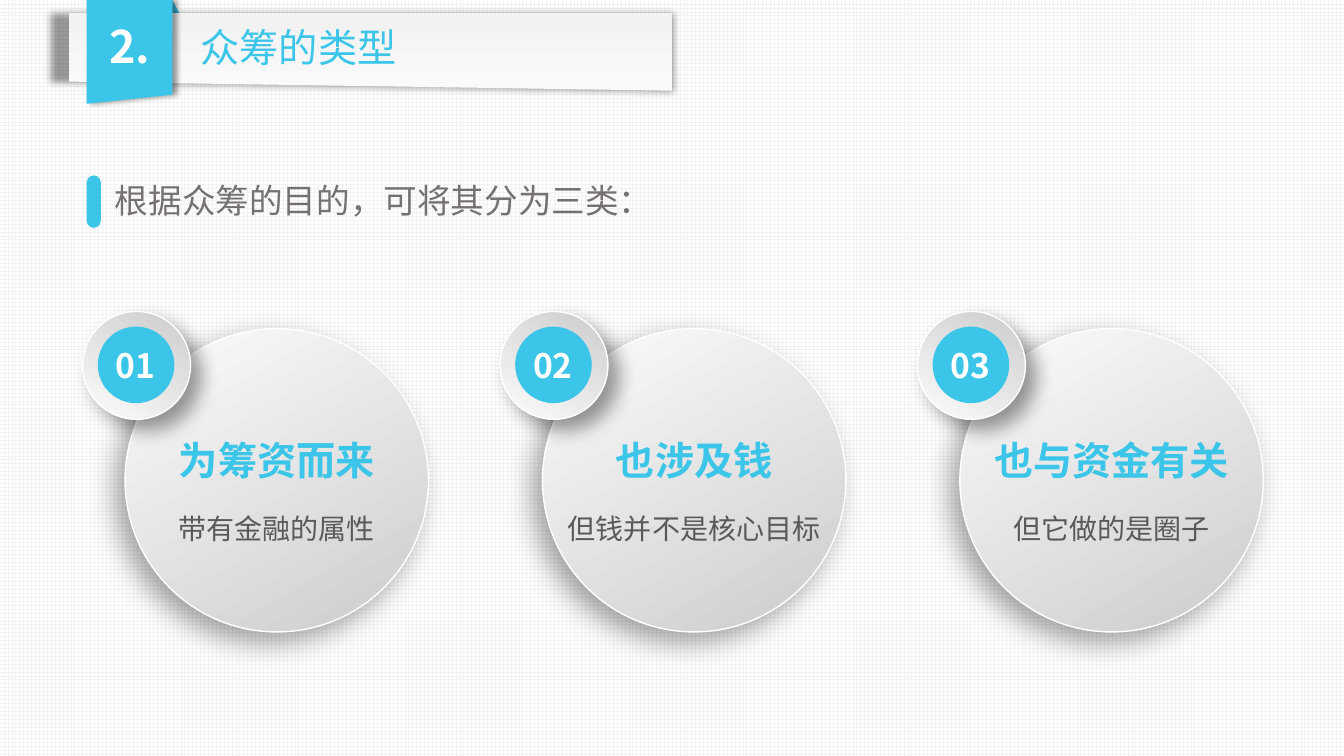
from lxml.etree import SubElement
from pptx import Presentation
from pptx.dml.color import RGBColor
from pptx.enum.dml import MSO_PATTERN
from pptx.enum.shapes import MSO_SHAPE
from pptx.enum.text import MSO_ANCHOR, PP_ALIGN
from pptx.oxml.ns import qn
from pptx.util import Inches, Pt

FONT = "Noto Sans CJK SC"
COLORS = {
    "blue": "3BC5E9", "white": "FFFFFF", "grid": "F2F2F2", "pale": "FAFAFA",
    "dark": "CCCCCC", "light": "FCFCFC", "text": "595959", "intro": "767171",
}
TYPES = [
    ("01", "为筹资而来", "带有金融的属性"),
    ("02", "也涉及钱", "但钱并不是核心目标"),
    ("03", "也与资金有关", "但它做的是圈子"),
]
FIRST_LEFT, PITCH = 0.82, 4.14


def rgb(name):
    return RGBColor.from_string(COLORS[name])


def paint(sp, fill, angle=None):
    """Fill with one colour, or with a (start, end) gradient at an angle."""
    sp.shadow.inherit = False
    sp.line.fill.background()
    if angle is None:
        sp.fill.solid()
        sp.fill.fore_color.rgb = rgb(fill)
        return
    sp.fill.gradient()
    sp.fill.gradient_angle = angle
    for stop, name in zip(sp.fill.gradient_stops, fill):
        stop.color.rgb = rgb(name)


def add_shadow(sp, alpha, blur, dist, direction, **scale):
    effects = sp.element.spPr.find(qn("a:effectLst"))
    shadow = SubElement(effects, qn("a:outerShdw"), blurRad=str(Pt(blur)),
                        dist=str(Pt(dist)), dir=str(direction * 60000),
                        rotWithShape="0", **scale)
    color = SubElement(shadow, qn("a:srgbClr"), val="000000")
    SubElement(color, qn("a:alpha"), val=str(alpha * 1000))


def add_preset(s, kind, left, top, width, height, fill, angle=None):
    sp = s.shapes.add_shape(kind, Inches(left), Inches(top),
                            Inches(width), Inches(height))
    paint(sp, fill, angle)
    return sp


def add_disc(s, left, top, size, angle):
    sp = add_preset(s, MSO_SHAPE.OVAL, left, top, size, size,
                    ("dark", "light"), angle)
    sp.line.color.rgb = rgb("white")
    sp.line.width = Pt(1)
    return sp


def add_outline(s, points, fill, angle=None):
    start, *rest = [(Inches(x), Inches(y)) for x, y in points]
    builder = s.shapes.build_freeform(*start)
    builder.add_line_segments(rest, close=True)
    sp = builder.convert_to_shape()
    paint(sp, fill, angle)
    return sp


def add_run(p, text, size, color, bold=False):
    r = p.add_run()
    r.text = text
    r.font.name = FONT
    r.font.size = Pt(size)
    r.font.bold = bold
    r.font.color.rgb = rgb(color)
    SubElement(r.font._element, qn("a:ea"), typeface=FONT)


def add_text(s, left, top, width, height, text, size, color,
             bold=False, align=PP_ALIGN.LEFT):
    box = s.shapes.add_textbox(Inches(left), Inches(top),
                               Inches(width), Inches(height))
    tf = box.text_frame
    tf.word_wrap = True
    p = tf.paragraphs[0]
    p.alignment = align
    add_run(p, text, size, color, bold)
    return tf


def add_header(s, number, heading):
    # Fold, bar and ribbon
    add_preset(s, MSO_SHAPE.RIGHT_TRIANGLE, 1.71, 0, 0.07, 0.13, "blue")
    bar = add_outline(s, [(6.67, 0.13), (0.68, 0.13), (0.68, 0.81), (6.67, 0.9)],
                      ("pale", "grid"), 90)
    add_shadow(bar, 40, 5, 0, 0, sx="103000", algn="r")
    ribbon = add_outline(s, [(1.71, 0), (1.71, 0.94), (0.86, 1.03), (0.86, 0)],
                         "blue")
    add_shadow(ribbon, 40, 4, 3, 0)
    add_text(s, 0.88, 0.14, 0.82, 0.64, number, 32, "white", True,
             PP_ALIGN.CENTER)

    # Title, brought in front of the bar
    title = s.shapes.title
    title.left, title.top = Inches(1.89), Inches(0.18)
    title.width, title.height = Inches(4.62), Inches(0.57)
    tf = title.text_frame
    tf.vertical_anchor = MSO_ANCHOR.TOP
    p = tf.paragraphs[0]
    p.alignment = PP_ALIGN.LEFT
    add_run(p, heading, 28, "blue")
    title.element.getparent().append(title.element)


def add_type(s, left, number, name, note):
    # Large disc with its name and note
    disc = add_disc(s, left + 0.42, 3.26, 3.01, 120)
    add_shadow(disc, 34, 20, 10, 136)
    tf = add_text(s, left + 0.42, 4.33, 3.01, 1.21, name, 28, "blue", True,
                  PP_ALIGN.CENTER)
    tf.margin_top = tf.margin_bottom = 0
    p = tf.add_paragraph()
    p.alignment = PP_ALIGN.CENTER
    p.space_before = Pt(20)
    add_run(p, note, 20, "text")

    # Number badge
    badge = add_disc(s, left, 3.09, 1.07, 240)
    add_shadow(badge, 40, 14, 10, 45)
    add_preset(s, MSO_SHAPE.OVAL, left + 0.15, 3.24, 0.76, 0.76, "blue")
    add_text(s, left + 0.2, 3.37, 0.65, 0.5, number, 24, "white", True,
             PP_ALIGN.CENTER)


def main():
    prs = Presentation()
    prs.slide_width, prs.slide_height = Inches(13.33), Inches(7.5)
    s = prs.slides.add_slide(prs.slide_layouts[5])

    # Grid background
    fill = s.background.fill
    fill.patterned()
    fill.pattern = MSO_PATTERN.LARGE_GRID
    fill.fore_color.rgb = rgb("grid")
    fill.back_color.rgb = rgb("white")

    add_header(s, "2.", "众筹的类型")
    for i, texts in enumerate(TYPES):
        add_type(s, FIRST_LEFT + i * PITCH, *texts)

    # Introductory line with its marker
    add_text(s, 1.04, 1.74, 5.22, 0.5, "根据众筹的目的，可将其分为三类：", 24, "intro")
    marker = add_preset(s, MSO_SHAPE.ROUNDED_RECTANGLE, 0.86, 1.74, 0.14, 0.52,
                        "blue")
    marker.adjustments[0] = 0.5

    prs.save("out.pptx")


if __name__ == "__main__":
    main()
